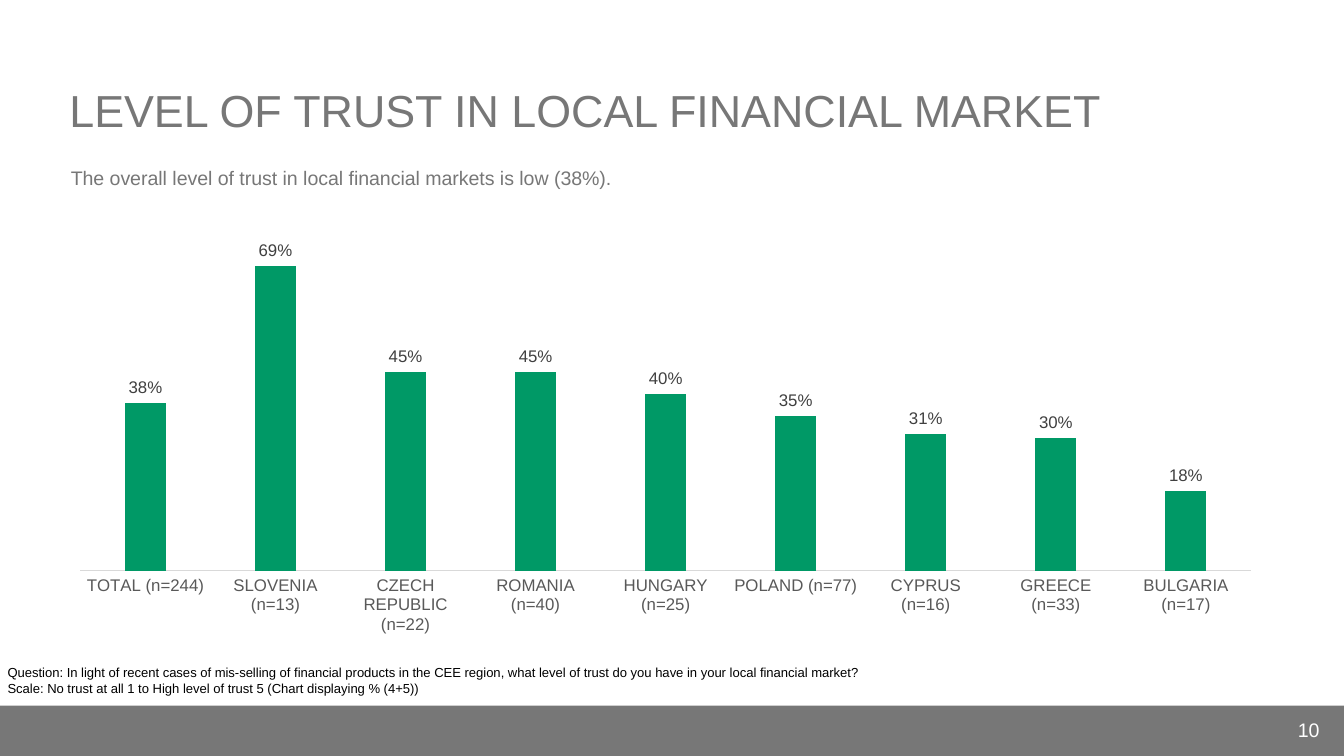
from lxml import etree
from pptx import Presentation
from pptx.chart.data import CategoryChartData
from pptx.dml.color import RGBColor
from pptx.enum.chart import XL_CHART_TYPE, XL_LABEL_POSITION, XL_TICK_LABEL_POSITION, XL_TICK_MARK
from pptx.enum.shapes import MSO_SHAPE
from pptx.enum.text import MSO_ANCHOR, MSO_AUTO_SIZE, PP_ALIGN
from pptx.oxml.ns import qn
from pptx.util import Pt

PX = 9525
FONT = "Arial"
COLORS = {
    "grey": "777777", "white": "FFFFFF", "black": "000000", "bar": "009966",
    "category": "595959", "label": "404040", "axis": "D9D9D9",
}
TRUST = {
    "TOTAL (n=244)": 0.38, "SLOVENIA (n=13)": 0.69, "CZECH REPUBLIC (n=22)": 0.45,
    "ROMANIA (n=40)": 0.45, "HUNGARY (n=25)": 0.40, "POLAND (n=77)": 0.35,
    "CYPRUS (n=16)": 0.31, "GREECE (n=33)": 0.30, "BULGARIA (n=17)": 0.18,
}
PLOT_AREA = {"x": 0.02, "y": 0.02, "w": 0.96, "h": 0.82}


def rgb(name):
    """Return the named colour."""
    return RGBColor.from_string(COLORS[name])


def apply(target, values):
    """Set every attribute in values on the target."""
    for name, value in values.items():
        setattr(target, name, value)


def scaled(box):
    """Turn a box in px into EMU lengths."""
    return [length * PX for length in box]


def style_font(font, size, color):
    """Give a font its face, size and colour."""
    apply(font, {"name": FONT, "size": Pt(size), "bold": False})
    font.color.rgb = rgb(color)


def write(shape, box, lines, size, color, anchor=MSO_ANCHOR.TOP, align=PP_ALIGN.LEFT):
    """Place a text shape and fill it with formatted paragraphs."""
    apply(shape, dict(zip(("left", "top", "width", "height"), scaled(box))))
    frame = shape.text_frame
    frame.text = "\n".join(lines)
    apply(frame, {"word_wrap": True, "auto_size": MSO_AUTO_SIZE.NONE, "vertical_anchor": anchor})
    for paragraph in frame.paragraphs:
        apply(paragraph, {"alignment": align, "space_before": Pt(0)})
        for run in paragraph.runs:
            style_font(run.font, size, color)


def remove_bullet(paragraph):
    """Turn a list item into plain text with a slight indent."""
    properties = paragraph._p.get_or_add_pPr()
    for name, value in {"marL": PX, "indent": 0}.items():
        properties.set(name, str(value))
    etree.SubElement(properties, qn("a:buNone"))


def add_heading(slide, box):
    """Fill the title and the summary line below it."""
    left, top, width, height = box
    title, summary = slide.placeholders
    write(title, (left, top, width, 90), ["LEVEL OF TRUST IN LOCAL FINANCIAL MARKET"],
          24, "grey", MSO_ANCHOR.BOTTOM)
    write(summary, (left, top + 102, width, height - 102),
          ["The overall level of trust in local financial markets is low (38%)."], 10.5, "grey")
    remove_bullet(summary.text_frame.paragraphs[0])


def fix_plot_area(chart):
    """Pin the inner plot area to fractions of the chart."""
    plot_area = chart._chartSpace.chart.plotArea
    for old in plot_area.findall(qn("c:layout")):
        plot_area.remove(old)
    layout = etree.Element(qn("c:layout"))
    plot_area.insert(0, layout)
    manual = etree.SubElement(layout, qn("c:manualLayout"))
    settings = {"layoutTarget": "inner", "xMode": "edge", "yMode": "edge", **PLOT_AREA}
    for name, value in settings.items():
        etree.SubElement(manual, qn(f"c:{name}")).set("val", str(value))


def add_trust_chart(slide, box):
    """Draw the trust level of each country as columns."""
    data = CategoryChartData(number_format="0%")
    data.categories = list(TRUST)
    data.add_series("Series 1", list(TRUST.values()))
    chart = slide.shapes.add_chart(XL_CHART_TYPE.COLUMN_CLUSTERED, *scaled(box), data).chart
    apply(chart, {"has_legend": False, "has_title": False})
    style_font(chart.font, 10, "black")
    fix_plot_area(chart)

    countries = chart.category_axis
    apply(countries, {"major_tick_mark": XL_TICK_MARK.NONE, "minor_tick_mark": XL_TICK_MARK.NONE,
                      "tick_label_position": XL_TICK_LABEL_POSITION.NEXT_TO_AXIS})
    style_font(countries.tick_labels.font, 9, "category")
    countries.format.line.width = Pt(0.75)
    countries.format.line.color.rgb = rgb("axis")
    apply(chart.value_axis, {"visible": False, "has_major_gridlines": False,
                             "major_tick_mark": XL_TICK_MARK.NONE,
                             "minimum_scale": 0, "maximum_scale": 0.8})
    chart.value_axis.tick_labels.number_format = "0%"

    plot = chart.plots[0]
    apply(plot, {"gap_width": 219, "overlap": -27, "vary_by_categories": False})
    trust = plot.series[0]
    trust.format.fill.solid()
    trust.format.fill.fore_color.rgb = rgb("bar")
    labels = trust.data_labels
    apply(labels, {"show_value": True, "position": XL_LABEL_POSITION.OUTSIDE_END,
                   "number_format": "0%", "number_format_is_linked": False})
    style_font(labels.font, 9, "label")


def add_question(slide, box):
    """Write the survey question and its scale."""
    write(slide.shapes.add_textbox(*scaled(box)), box, [
        "Question: In light of recent cases of mis-selling of financial products in the CEE region, "
        "what level of trust do you have in your local financial market?",
        "Scale: No trust at all 1 to High level of trust 5 (Chart displaying % (4+5))",
    ], 7, "black")


def add_footer(slide, box):
    """Draw the footer band with the page number at its right end."""
    left, top, width, height = box
    band = slide.shapes.add_shape(MSO_SHAPE.RECTANGLE, *scaled(box))
    band.shadow.inherit = False
    band.fill.solid()
    band.fill.fore_color.rgb = rgb("grey")
    band.line.fill.background()
    number_box = (left + width - 90, top + 3, 82, 29)
    write(slide.shapes.add_textbox(*scaled(number_box)), number_box, ["10"], 10.5, "white",
          MSO_ANCHOR.MIDDLE, PP_ALIGN.RIGHT)


def main():
    """Build and save the slide."""
    deck = Presentation()
    apply(deck, {"slide_width": 960 * PX, "slide_height": 540 * PX})
    slide = deck.slides.add_slide(deck.slide_layouts[1])
    add_footer(slide, (0, 504, 960, 36))
    add_heading(slide, (40, 12, 880, 156))
    add_question(slide, (-4, 470, 672, 33))
    add_trust_chart(slide, (40, 149, 871, 308))
    deck.save("out.pptx")


if __name__ == "__main__":
    main()
